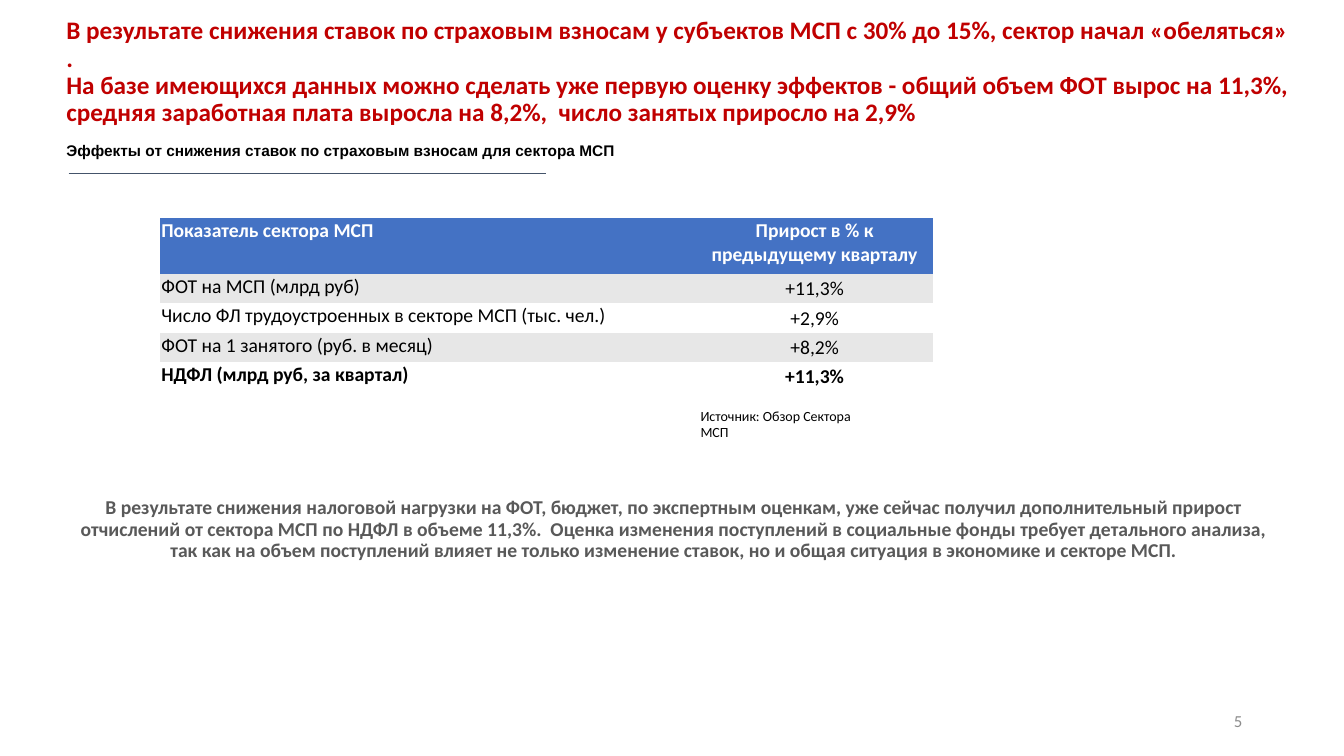
from dataclasses import dataclass

from lxml import etree
from pptx import Presentation
from pptx.dml.color import RGBColor
from pptx.enum.shapes import MSO_CONNECTOR
from pptx.enum.text import MSO_ANCHOR, PP_ALIGN
from pptx.oxml.ns import qn
from pptx.util import Emu, Pt

LEFT, CENTER, RIGHT = PP_ALIGN.LEFT, PP_ALIGN.CENTER, PP_ALIGN.RIGHT
TOP, MIDDLE = MSO_ANCHOR.TOP, MSO_ANCHOR.MIDDLE
STRAIGHT = MSO_CONNECTOR.STRAIGHT
EMU_PER_PX = 9144
UNSTYLED_TABLE = "{2D5ABB26-0587-4C30-8999-92F81FD0307C}"


@dataclass(frozen=True)
class Theme:
    body_font: str = "Calibri"
    caption_font: str = "Arial"
    headline: str = "C00000"
    ink: str = "000000"
    muted: str = "595959"
    page: str = "8C8C8C"
    rule: str = "44546A"
    header_fill: str = "4472C4"
    band_fill: str = "E7E7E7"
    plain_fill: str = "FFFFFF"
    headline_size: int = 18
    body_size: int = 14
    page_size: int = 12
    caption_size: int = 11
    source_size: int = 10


THEME = Theme()

HEADLINE = (
    "В результате снижения ставок по страховым взносам у субъектов МСП "
    "с 30% до 15%, сектор начал «обеляться» .\v"
    "На базе имеющихся данных можно сделать уже первую оценку эффектов - "
    "общий объем ФОТ вырос на 11,3%, средняя заработная плата выросла на 8,2%,  "
    "число занятых приросло на 2,9%"
)
CONCLUSION = (
    "В результате снижения налоговой нагрузки на ФОТ, бюджет, по экспертным "
    "оценкам, уже сейчас получил дополнительный прирост отчислений от сектора "
    "МСП по НДФЛ в объеме 11,3%.  Оценка изменения поступлений в социальные "
    "фонды требует детального анализа, так как на объем поступлений влияет не "
    "только изменение ставок, но и общая ситуация в экономике и секторе МСП."
)
GROWTH = [
    ("Показатель сектора МСП", "Прирост в % к предыдущему кварталу"),
    ("ФОТ на МСП (млрд руб)", "+11,3%"),
    ("Число ФЛ трудоустроенных в секторе МСП (тыс. чел.)", "+2,9%"),
    ("ФОТ на 1 занятого (руб. в месяц)", "+8,2%"),
    ("НДФЛ (млрд руб, за квартал)", "+11,3%"),
]


def px(length):
    return Emu(length * EMU_PER_PX)


def style(paragraph, size, color, bold=False, align=LEFT, font=THEME.body_font):
    paragraph.alignment = align
    paragraph.font.name = font
    paragraph.font.size = Pt(size)
    paragraph.font.bold = bold
    paragraph.font.color.rgb = RGBColor.from_string(color)


def add_text(slide, box, wording, size, color, anchor=TOP, wrap=True,
             spacing=None, inset_top=5, inset_bottom=5, **look):
    frame = slide.shapes.add_textbox(*map(px, box)).text_frame
    frame.word_wrap = wrap
    frame.vertical_anchor = anchor
    frame.margin_top, frame.margin_bottom = px(inset_top), px(inset_bottom)
    frame.text = wording
    paragraph = frame.paragraphs[0]
    paragraph.line_spacing = spacing
    style(paragraph, size, color, **look)


def add_headline(slide, box):
    add_text(slide, box, HEADLINE, THEME.headline_size, THEME.headline,
             anchor=MIDDLE, spacing=0.9, inset_bottom=35, bold=True)


def add_caption(slide, box):
    left, top, width, height = box
    add_text(slide, box, "Эффекты от снижения ставок по страховым взносам для сектора МСП",
             THEME.caption_size, THEME.ink, bold=True, font=THEME.caption_font)
    rule_left, rule_top = left + 12, top + height + 8
    rule = slide.shapes.add_connector(
        STRAIGHT, px(rule_left), px(rule_top), px(rule_left + 474), px(rule_top))
    rule.line.color.rgb = RGBColor.from_string(THEME.rule)
    rule.line.width = Pt(1)
    etree.SubElement(rule._element.spPr, qn("a:effectLst"))


def add_growth_table(slide, box):
    left, top, width, height = box
    header_height = 56
    row_height = (height - header_height) // (len(GROWTH) - 1)
    value_width = 234
    table = slide.shapes.add_table(len(GROWTH), 2, *map(px, box)).table
    table._tbl.tblPr.find(qn("a:tableStyleId")).text = UNSTYLED_TABLE
    table.columns[0].width = px(width - value_width)
    table.columns[1].width = px(value_width)
    for row, values in enumerate(GROWTH):
        is_header = row == 0
        is_total = row == len(GROWTH) - 1
        table.rows[row].height = px(header_height if is_header else row_height)
        band = THEME.band_fill if row % 2 else THEME.plain_fill
        for column, wording in enumerate(values):
            cell = table.cell(row, column)
            cell.margin_left = cell.margin_right = cell.margin_top = px(1)
            cell.margin_bottom = 0
            cell.vertical_anchor = MIDDLE if column and not is_header else TOP
            cell.fill.solid()
            cell.fill.fore_color.rgb = RGBColor.from_string(
                THEME.header_fill if is_header else band)
            cell.text = wording
            style(cell.text_frame.paragraphs[0], THEME.body_size,
                  THEME.plain_fill if is_header else THEME.ink,
                  bold=is_header or is_total, align=CENTER if column else LEFT)


def add_source(slide, box):
    add_text(slide, box, "Источник: Обзор Сектора МСП", THEME.source_size,
             THEME.ink, wrap=False)


def add_conclusion(slide, box):
    add_text(slide, box, CONCLUSION, THEME.body_size, THEME.muted, anchor=MIDDLE,
             spacing=0.9, inset_top=27, bold=True, align=CENTER)


def add_page_number(slide, box):
    add_text(slide, box, "5", THEME.page_size, THEME.page, anchor=MIDDLE, align=RIGHT)


def main():
    deck = Presentation()
    deck.slide_width, deck.slide_height = px(1333), px(750)
    slide = deck.slides.add_slide(deck.slide_layouts[6])
    add_page_number(slide, (942, 695, 300, 40))
    add_headline(slide, (56, 57, 1237, 60))
    add_caption(slide, (56, 135, 686, 29))
    add_source(slide, (685, 399, 194, 27))
    add_conclusion(slide, (56, 451, 1225, 127))
    add_growth_table(slide, (159, 216, 766, 172))
    deck.save("out.pptx")


if __name__ == "__main__":
    main()
